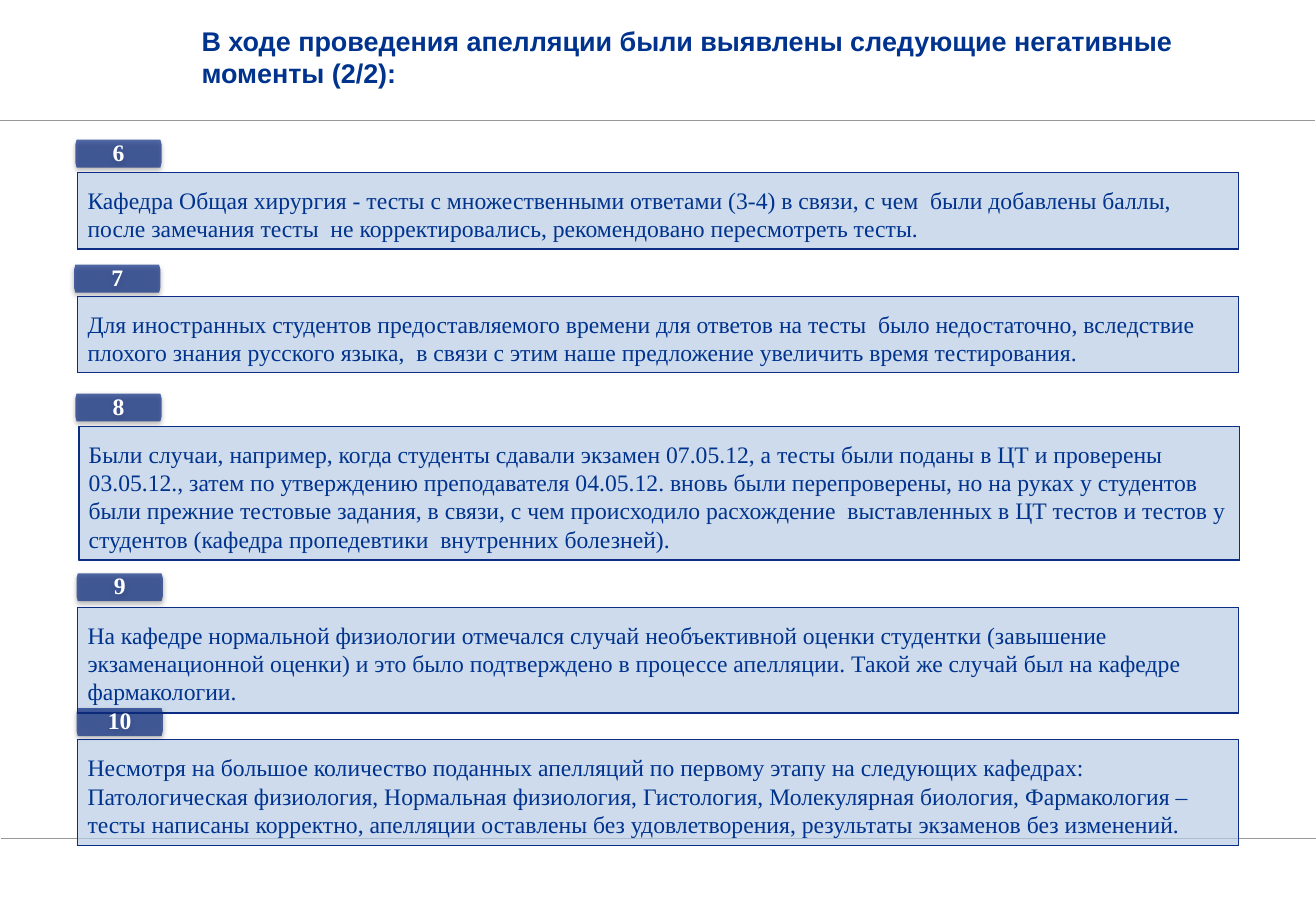
from lxml import etree
from pptx import Presentation
from pptx import util as u
from pptx.dml.color import RGBColor
from pptx.enum import shapes, text
from pptx.oxml import ns

COLORS = {"title": "00338D", "navy": "0C2D83", "box": "B9CDE5",
          "rule": "97989A", "white": "FFFFFF", "shadow": "000000"}
SERIF = "Times New Roman"
BOX_WIDTH = 9.55
LABEL_WIDTH, LABEL_HEIGHT = 0.71, 0.23

# number, label left and top, box left, top and height, text
FINDINGS = [
    ("6", 0.62, 1.15, 0.64, 1.42, 0.63,
     "Кафедра Общая хирургия - тесты с множественными ответами (3-4) в связи, с чем  "
     "были добавлены баллы, после замечания тесты  не корректировались, "
     "рекомендовано пересмотреть тесты."),
    ("7", 0.61, 2.18, 0.64, 2.44, 0.63,
     "Для иностранных студентов предоставляемого времени для ответов на тесты  "
     "было недостаточно, вследствие плохого знания русского языка,  в связи с этим "
     "наше предложение увеличить время тестирования."),
    ("8", 0.62, 3.24, 0.65, 3.51, 1.1,
     "Были случаи, например, когда студенты сдавали экзамен 07.05.12, а тесты были "
     "поданы в ЦТ и проверены 03.05.12., затем по утверждению преподавателя 04.05.12. "
     "вновь были перепроверены, но на руках у студентов  были прежние тестовые задания, "
     "в связи, с чем происходило расхождение  выставленных в ЦТ тестов и тестов у "
     "студентов (кафедра пропедевтики  внутренних болезней)."),
    ("9", 0.63, 4.72, 0.64, 5, 0.87,
     "На кафедре нормальной физиологии отмечался случай необъективной оценки студентки "
     "(завышение экзаменационной оценки) и это было подтверждено в процессе апелляции. "
     "Такой же случай был на кафедре фармакологии."),
    ("10", 0.63, 5.83, 0.64, 6.09, 0.87,
     "Несмотря на большое количество поданных апелляций по первому этапу на следующих "
     "кафедрах: Патологическая физиология, Нормальная физиология, Гистология, "
     "Молекулярная биология, Фармакология – тесты написаны корректно, апелляции "
     "оставлены без удовлетворения, результаты экзаменов без изменений."),
]


def rgb(name):
    return RGBColor.from_string(COLORS[name])


def write(shape, content, *, size, font, color, bold=False, insets=(0.1, 0.05, 0.1, 0.05),
          anchor=text.MSO_ANCHOR.TOP, align=text.PP_ALIGN.LEFT, line_spacing=None):
    """Fill a shape with one paragraph; insets are left, top, right, bottom."""
    frame = shape.text_frame
    frame.word_wrap = True
    frame.vertical_anchor = anchor
    frame.margin_left, frame.margin_top, frame.margin_right, frame.margin_bottom = map(
        u.Inches, insets)
    paragraph = frame.paragraphs[0]
    paragraph.alignment = align
    paragraph.line_spacing = line_spacing
    run = paragraph.add_run()
    run.text = content
    run.font.size = u.Pt(size)
    run.font.name = font
    run.font.bold = bold
    run.font.color.rgb = rgb(color)


def fill_translucent(shape, color):
    shape.fill.solid()
    shape.fill.fore_color.rgb = rgb(color)
    hue = shape.fill._xPr.find(".//" + ns.qn("a:srgbClr"))
    etree.SubElement(hue, ns.qn("a:alpha"), val="70000")


def add_rule(slide, left, top, right):
    line = slide.shapes.add_connector(shapes.MSO_CONNECTOR.STRAIGHT, u.Inches(left),
                                      u.Inches(top), u.Inches(right), u.Inches(top))
    line.line.color.rgb = rgb("rule")
    line.line.width = u.Pt(0.5)
    etree.SubElement(line._element.spPr, ns.qn("a:effectLst"))


def add_label(slide, number, left, top):
    """Draw a number tab with slightly cut corners and a soft shadow below."""
    right, bottom = left + LABEL_WIDTH, top + LABEL_HEIGHT
    cut_x, cut_y = 0.01, 0.04
    corners = [(left, top + cut_y), (left + cut_x, top), (right - cut_x, top),
               (right, top + cut_y), (right, bottom - cut_y), (right - cut_x, bottom),
               (left + cut_x, bottom), (left, bottom - cut_y)]
    points = [(u.Inches(x), u.Inches(y)) for x, y in corners]
    builder = slide.shapes.build_freeform(*points[0])
    builder.add_line_segments(points[1:], close=True)
    label = builder.convert_to_shape()
    fill_translucent(label, "navy")
    label.line.fill.background()
    label.shadow.inherit = False
    effects = label._element.spPr.find(ns.qn("a:effectLst"))
    shadow = etree.SubElement(effects, ns.qn("a:outerShdw"), blurRad=str(u.Pt(3.1)),
                              dist=str(u.Pt(1.6)), dir="5400000", rotWithShape="0")
    hue = etree.SubElement(shadow, ns.qn("a:srgbClr"), val=COLORS["shadow"])
    etree.SubElement(hue, ns.qn("a:alpha"), val="38000")
    write(label, number, size=14, font=SERIF, color="white", bold=True, insets=(0.06,) * 4,
          anchor=text.MSO_ANCHOR.MIDDLE, align=text.PP_ALIGN.CENTER, line_spacing=0.9)


def add_box(slide, content, left, top, height):
    box = slide.shapes.add_shape(shapes.MSO_SHAPE.BEVEL, u.Inches(left), u.Inches(top),
                                 u.Inches(BOX_WIDTH), u.Inches(height))
    box.adjustments[0] = 0
    fill_translucent(box, "box")
    box.line.color.rgb = rgb("navy")
    box.line.width = u.Pt(0.75)
    box.shadow.inherit = False
    write(box, content, size=14, font=SERIF, color="title", insets=(0.08, 0.11, 0.08, 0.07))


def add_title(slide, content):
    title = slide.shapes.add_textbox(u.Inches(1.56), u.Inches(-0.03),
                                     u.Inches(9.12), u.Inches(0.99))
    write(title, content, size=16, font="Arial", color="title", bold=True,
          anchor=text.MSO_ANCHOR.MIDDLE)


def main():
    presentation = Presentation()
    presentation.slide_width = u.Inches(10.83)
    presentation.slide_height = u.Inches(7.5)
    slide = presentation.slides.add_slide(presentation.slide_layouts[6])
    add_rule(slide, 0, 0.99, 10.82)
    add_rule(slide, 0.01, 6.9, 10.83)
    for number, label_left, label_top, box_left, box_top, height, content in FINDINGS:
        add_label(slide, number, label_left, label_top)
        add_box(slide, content, box_left, box_top, height)
    add_title(slide, "В ходе проведения апелляции были выявлены следующие "
                     "негативные моменты (2/2):")
    presentation.save("out.pptx")


if __name__ == "__main__":
    main()
